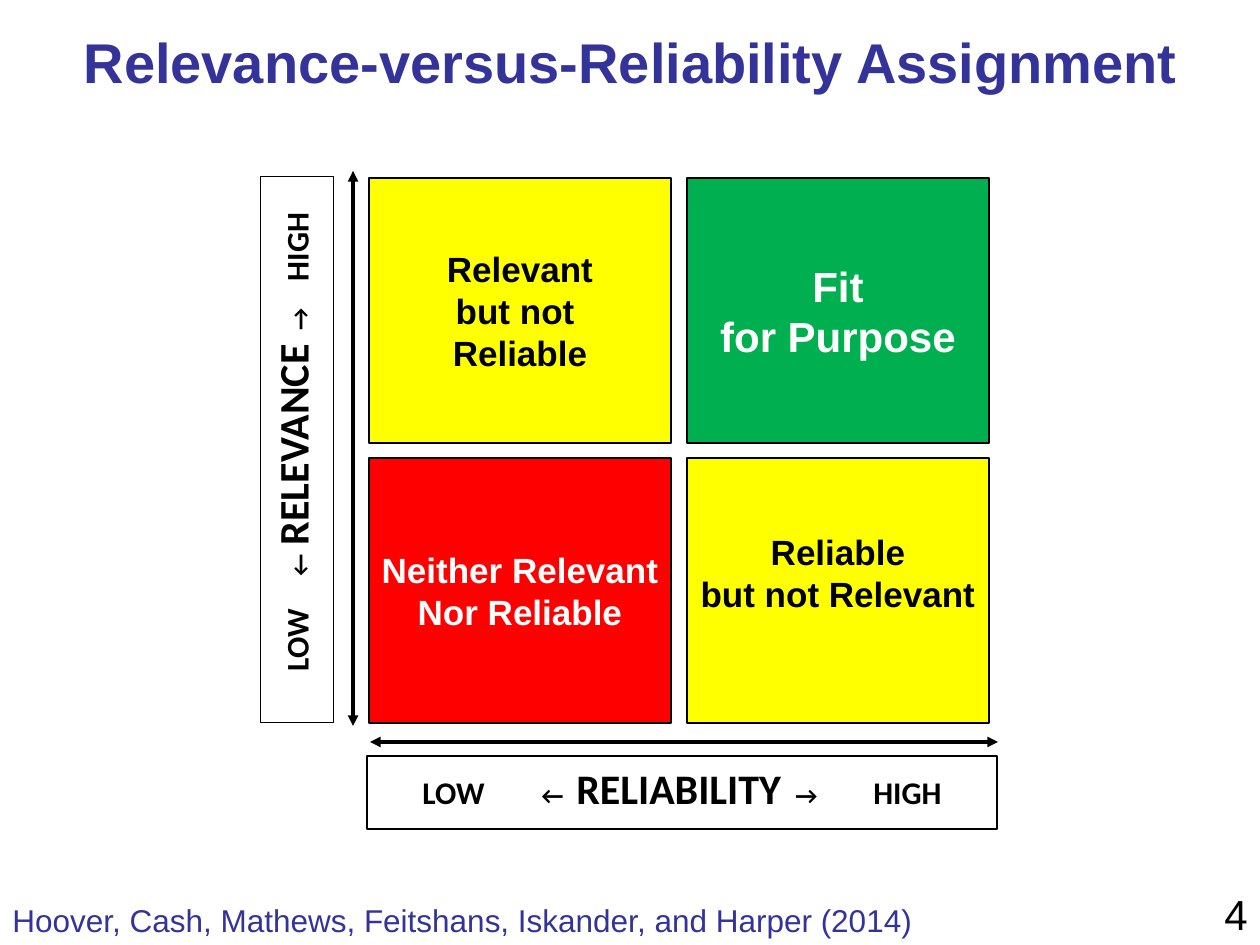
from dataclasses import dataclass
from typing import Any, NamedTuple

from lxml.etree import SubElement
from pptx import Presentation
from pptx.dml.color import RGBColor
from pptx.enum.shapes import MSO_CONNECTOR, MSO_SHAPE
from pptx.enum.text import MSO_ANCHOR, MSO_AUTO_SIZE, PP_ALIGN
from pptx.oxml.ns import qn
from pptx.util import Pt

EMU_PER_PX = 914400 / 126


@dataclass(frozen=True)
class Theme:
    sans: str = "Arial"
    axis: str = "Calibri"
    navy: str = "333399"
    black: str = "000000"
    white: str = "FFFFFF"
    green: str = "00B050"
    yellow: str = "FFFF00"
    red: str = "FF0000"
    title: int = 32
    large: int = 24
    cell: int = 20
    small: int = 18
    arrow: int = 14
    outline: float = 0.75
    arrow_line: float = 2


T = Theme()


class Box(NamedTuple):
    x: int
    y: int
    w: int
    h: int


class Quadrant(NamedTuple):
    col: int
    row: int
    text: str
    fill: str
    color: str
    size: int
    bottom: int = 6


class Axis(NamedTuple):
    box: Box
    rotation: int
    name: str
    tabs: tuple[int, ...]


class Arrow(NamedTuple):
    x1: int
    y1: int
    x2: int
    y2: int


CELL = Box(369, 178, 302, 265)
STEP_X, STEP_Y = 318, 280

QUADRANTS = [
    Quadrant(0, 0, "Relevant\nbut not \vReliable", T.yellow, T.black, T.cell),
    Quadrant(1, 0, "Fit\nfor Purpose", T.green, T.white, T.large),
    Quadrant(0, 1, "Neither Relevant\nNor Reliable", T.red, T.white, T.cell),
    Quadrant(1, 1, "Reliable\nbut not Relevant", T.yellow, T.black, T.cell, 42),
]
AXES = [
    Axis(Box(367, 756, 630, 73), 0, "RELIABILITY", (43, 162, 197, 416, 494)),
    Axis(Box(24, 413, 546, 73), 270, "RELEVANCE", (39, 134, 165, 380, 429)),
]
ARROWS = [Arrow(353, 171, 353, 726), Arrow(370, 742, 998, 742)]


def px(n: int) -> int:
    return round(n * EMU_PER_PX)


def apply(obj: Any, fmt: dict[str, Any]) -> None:
    for name, value in fmt.items():
        setattr(obj, name, value)


def style_run(r: Any, size: int, color: str, font: str, bold: bool) -> None:
    apply(r.font, {"size": Pt(size), "name": font, "bold": bold})
    r.font.color.rgb = RGBColor.from_string(color)


def write(tf: Any, text: str, size: int, color: str, align: Any, bold: bool) -> None:
    tf.text = text
    for p in tf.paragraphs:
        p.alignment = align
        for r in p.runs:
            style_run(r, size, color, T.sans, bold)


def add_box(s: Any, box: Box, fill: str) -> Any:
    sp = s.shapes.add_shape(MSO_SHAPE.RECTANGLE, *map(px, box))
    sp.shadow.inherit = False
    sp.fill.solid()
    sp.fill.fore_color.rgb = RGBColor.from_string(fill)
    sp.line.color.rgb = RGBColor.from_string(T.black)
    sp.line.width = Pt(T.outline)
    return sp


def add_quadrant(s: Any, q: Quadrant) -> None:
    box = CELL._replace(x=CELL.x + q.col * STEP_X, y=CELL.y + q.row * STEP_Y)
    tf = add_box(s, box, q.fill).text_frame
    apply(tf, {
        "word_wrap": True, "vertical_anchor": MSO_ANCHOR.MIDDLE,
        "margin_left": px(6), "margin_right": px(6),
        "margin_top": px(6), "margin_bottom": px(q.bottom),
    })
    write(tf, q.text, q.size, q.color, PP_ALIGN.CENTER, True)


def add_axis(s: Any, axis: Axis) -> None:
    sp = add_box(s, axis.box, T.white)
    sp.rotation = axis.rotation
    apply(sp.text_frame, {"word_wrap": True, "vertical_anchor": MSO_ANCHOR.TOP})
    p = sp.text_frame.paragraphs[0]
    p.alignment = PP_ALIGN.LEFT
    tabs = SubElement(p._p.get_or_add_pPr(), qn("a:tabLst"))
    for pos in axis.tabs:
        SubElement(tabs, qn("a:tab"), pos=str(px(pos)), algn="l")
    parts = [("LOW", T.small), ("←", T.arrow), (axis.name, T.large),
             ("→", T.arrow), ("HIGH", T.small)]
    for text, size in parts:
        r = p.add_run()
        r.text = "\t" + text
        style_run(r, size, T.black, T.axis, True)


def add_arrow(s: Any, arrow: Arrow) -> None:
    cn = s.shapes.add_connector(MSO_CONNECTOR.STRAIGHT, *map(px, arrow))
    cn.line.color.rgb = RGBColor.from_string(T.black)
    cn.line.width = Pt(T.arrow_line)
    props = cn.element.spPr
    for end in ("a:headEnd", "a:tailEnd"):
        SubElement(props.find(qn("a:ln")), qn(end), type="triangle")
    SubElement(props, qn("a:effectLst"))


def add_text(s: Any, box: Box, text: str, size: int, color: str, align: Any) -> None:
    tf = s.shapes.add_textbox(*map(px, box)).text_frame
    tf.word_wrap = True
    write(tf, text, size, color, align, False)


def add_title(s: Any, box: Box, text: str) -> None:
    sp = s.shapes.title
    apply(sp, dict(zip(("left", "top", "width", "height"), map(px, box))))
    apply(sp.text_frame, {
        "word_wrap": True, "auto_size": MSO_AUTO_SIZE.NONE,
        "vertical_anchor": MSO_ANCHOR.TOP,
    })
    write(sp.text_frame, text, T.title, T.navy, PP_ALIGN.CENTER, True)


def main() -> None:
    prs = Presentation()
    apply(prs, {"slide_width": px(1260), "slide_height": px(945)})
    s = prs.slides.add_slide(prs.slide_layouts[5])
    add_title(s, Box(1, 21, 1260, 81), "Relevance-versus-Reliability Assignment")
    for q in QUADRANTS:
        add_quadrant(s, q)
    for axis in AXES:
        add_axis(s, axis)
    for arrow in ARROWS:
        add_arrow(s, arrow)
    add_text(s, Box(966, 882, 294, 63), "4", T.large, T.black, PP_ALIGN.RIGHT)
    add_text(s, Box(0, 895, 968, 50),
             "Hoover, Cash, Mathews, Feitshans, Iskander, and Harper (2014)",
             T.small, T.navy, PP_ALIGN.LEFT)
    prs.save("out.pptx")


if __name__ == "__main__":
    main()
